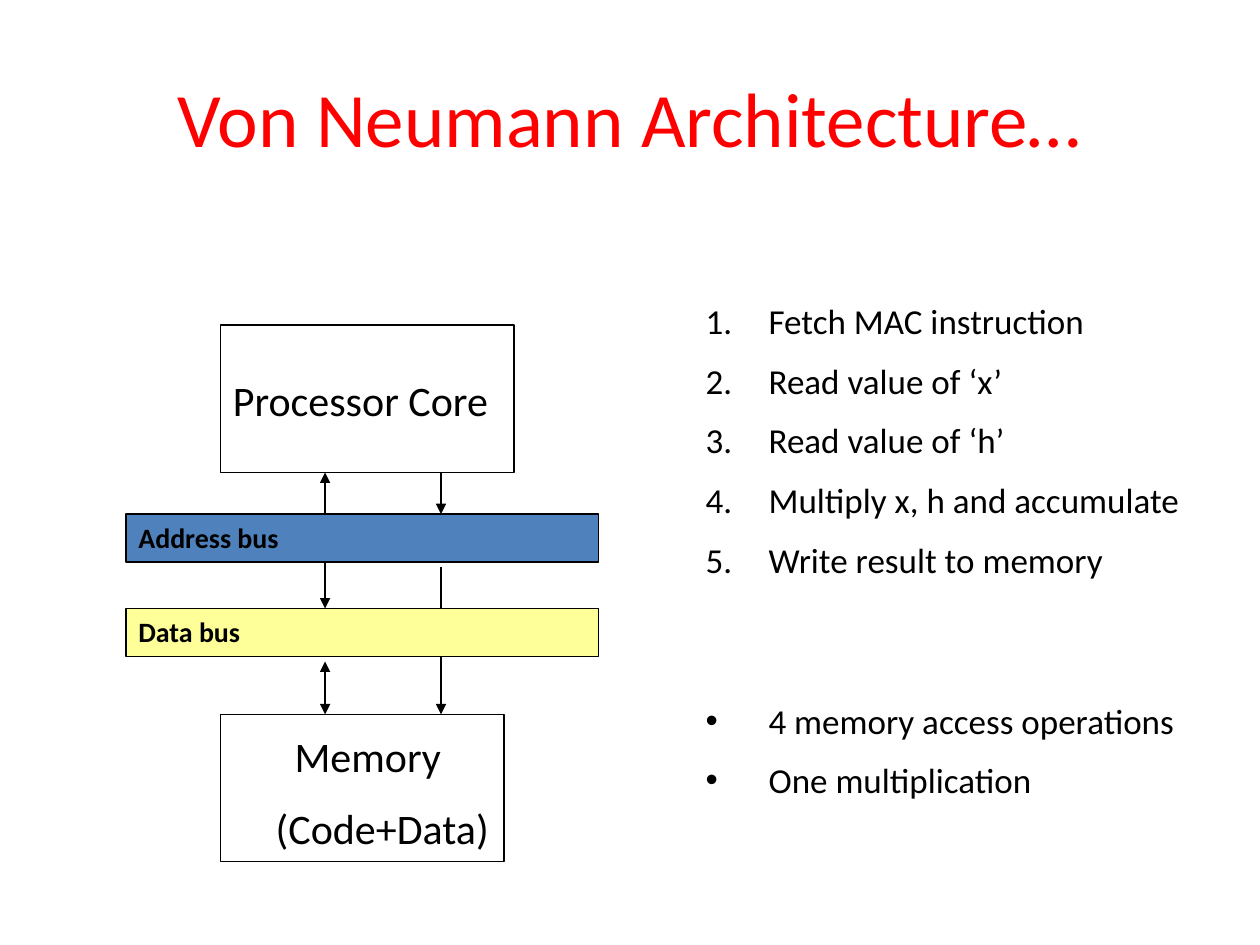
"""Build the Von Neumann architecture slide."""
from lxml import etree
from pptx import Presentation
from pptx import util as u
from pptx.dml.color import RGBColor
from pptx.enum import shapes, text
from pptx.oxml import ns

BLACK = RGBColor(0, 0, 0)
RED = RGBColor(255, 0, 0)
BLUE = RGBColor(0x4F, 0x81, 0xBD)
YELLOW = RGBColor(255, 255, 0x99)


def write(frame, lines, size=20, color=BLACK, bold=False, align=text.PP_ALIGN.LEFT,
          anchor=text.MSO_ANCHOR.TOP, gap=0.5, left=(), hang=0, mark=None):
    frame.word_wrap = True
    frame.auto_size = text.MSO_AUTO_SIZE.NONE
    frame.vertical_anchor = anchor
    for n, line in enumerate(lines):
        para = frame.paragraphs[0] if n == 0 else frame.add_paragraph()
        para.alignment = align
        para.space_before = u.Pt(size * gap)
        run = para.add_run()
        run.text = line
        font = run.font
        font.name, font.size, font.bold = "Calibri", u.Pt(size), bold
        font.color.rgb = color
        props = para._p.get_or_add_pPr()
        if left:
            props.set("marL", str(u.Inches(left[n])))
            props.set("indent", str(u.Inches(-hang)))
        if mark:
            tag, attr, value = mark
            etree.SubElement(props, ns.qn(tag)).set(attr, value)


def link(x, top, end, ends):
    line = tree.add_connector(shapes.MSO_CONNECTOR.STRAIGHT, u.Inches(x), u.Inches(top),
                              u.Inches(x), u.Inches(end))
    line.line.color.rgb = BLACK
    line.line.width = u.Pt(0.75)
    edge = line.line._get_or_add_ln()
    for tag in ends:
        etree.SubElement(edge, ns.qn(tag)).set("type", "triangle")
    etree.SubElement(line._element.spPr, ns.qn("a:effectLst"))


prs = Presentation()
prs.slide_width, prs.slide_height = u.Inches(10), u.Inches(7.5)
slide = prs.slides.add_slide(prs.slide_layouts[3])
tree = slide.shapes
title, steps, costs = slide.placeholders

spots = [(title, 0.5, 0.3, 9, 1.25), (steps, 5.5, 2.33, 4, 2.43), (costs, 5.5, 5.5, 3.92, 0.93)]
for holder, *box in spots:
    holder.left, holder.top, holder.width, holder.height = map(u.Inches, box)

write(title.text_frame, ["Von Neumann Architecture…"], size=44, color=RED, gap=0,
      align=text.PP_ALIGN.CENTER, anchor=text.MSO_ANCHOR.MIDDLE)
write(steps.text_frame, ["Fetch MAC instruction", "Read value of ‘x’", "Read value of ‘h’",
                         "Multiply x, h and accumulate", "Write result to memory"],
      left=[0.5] * 5, hang=0.5, mark=("a:buAutoNum", "type", "arabicPeriod"))
write(costs.text_frame, ["4 memory access operations", "One multiplication"],
      left=[0.5] * 2, hang=0.5, mark=("a:buChar", "char", "•"))

both = ["a:headEnd", "a:tailEnd"]
down = ["a:tailEnd"]
link(2.58, 4.83, 3.75, both)
link(3.5, 4.5, 5.67, down)

labels = [
    (["Processor Core"], (1.75, 2.92, 2.42, 0.5), ()),
    (["Memory", "(Code+Data)"], (1.41, 5.75, 3.05, 1.11), (0.83, 0.68)),
]
for lines, box, left in labels:
    label = tree.add_textbox(*map(u.Inches, box))
    write(label.text_frame, lines, size=24, left=left)

blocks = [
    (1.75, 2.58, 2.33, 1.17, None, None),
    (1.75, 5.67, 2.25, 1.17, None, None),
    (1, 4.08, 3.75, 0.38, BLUE, "Address bus"),
    (1, 4.83, 3.75, 0.38, YELLOW, "Data bus"),
]
for *box, fill, name in blocks:
    block = tree.add_shape(shapes.MSO_SHAPE.RECTANGLE, *map(u.Inches, box))
    block.shadow.inherit = False
    block.line.color.rgb = BLACK
    block.line.width = u.Pt(0.75)
    if fill is None:
        block.fill.background()
    else:
        block.fill.solid()
        block.fill.fore_color.rgb = fill
        write(block.text_frame, [name], size=16, bold=True)

link(3.5, 3.75, 4.08, down)
link(2.58, 5.25, 5.67, both)

prs.save("out.pptx")
